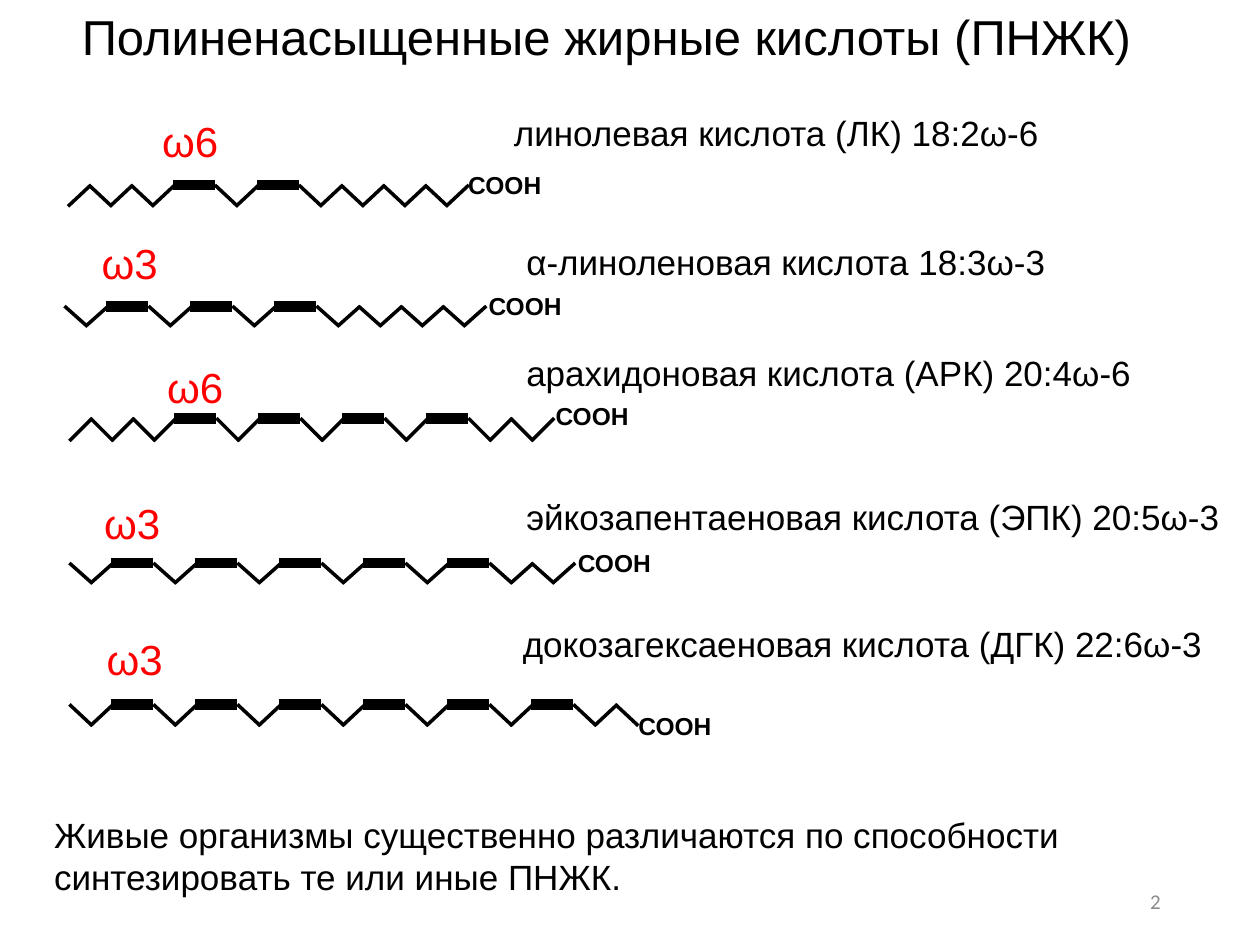
from dataclasses import dataclass
from lxml.etree import SubElement
from pptx import Presentation
from pptx.dml.color import RGBColor
from pptx.enum.shapes import MSO_CONNECTOR
from pptx.enum.text import MSO_ANCHOR, MSO_AUTO_SIZE, PP_ALIGN
from pptx.oxml.ns import qn
from pptx.slide import Slide
from pptx.util import Cm, Pt

INK = {"black": "000000", "red": "FF0000", "gray": "8C8C8C"}
STEP = 1.27 / 3
REACH = 0.46


@dataclass
class Acid:
    name: str
    name_at: tuple[float, float, float]
    mark: str
    mark_at: tuple[float, float]
    bonds: str
    start: tuple[float, float]
    drop: float
    end_at: tuple[float, float]


ACIDS = [
    Acid("линолевая кислота (ЛК) 18:2ω-6", (10.11, 2.13, 11.56), "ω6", (3.02, 2.21),
         "ududu" + "=du" * 2 + "du" * 3, (1.37, 3.73), 0.43, (9.19, 3.3)),
    Acid("α-линоленовая кислота 18:3ω-3", (10.36, 4.72, 11.05), "ω3", (1.8, 4.67),
         "du=" * 3 + "du" * 4, (1.3, 6.17), 0.41, (9.6, 5.74)),
    Acid("арахидоновая кислота (АРК) 20:4ω-6", (10.36, 6.96, 12.78), "ω6", (3.12, 7.16),
         "ududu" + "=du" * 4 + "du", (1.4, 8.43), 0.46, (10.95, 7.95)),
    Acid("эйкозапентаеновая кислота (ЭПК) 20:5ω-3", (10.36, 9.86, 14.58), "ω3", (1.85, 9.91),
         "du=" * 5 + "du" * 2, (1.4, 11.35), 0.41, (11.4, 10.92)),
    Acid("докозагексаеновая кислота (ДГК) 22:6ω-3", (10.29, 12.42, 14.3), "ω3", (1.9, 12.65),
         "du=" * 6 + "dud", (1.4, 14.2), 0.43, (12.62, 14.2)),
]


def write(slide: Slide, text: str, left: float, top: float, width: float, high: float, *,
          size: float = 20, ink: str = "black", font: str = "Arial", bold: bool = False,
          wrap: bool = False, grow: bool = True, align: PP_ALIGN = PP_ALIGN.LEFT,
          anchor: MSO_ANCHOR = MSO_ANCHOR.TOP) -> None:
    frame = slide.shapes.add_textbox(Cm(left), Cm(top), Cm(width), Cm(high)).text_frame
    frame.word_wrap = wrap
    frame.auto_size = MSO_AUTO_SIZE.SHAPE_TO_FIT_TEXT if grow else MSO_AUTO_SIZE.NONE
    frame.vertical_anchor = anchor
    para = frame.paragraphs[0]
    para.alignment = align
    run = para.add_run()
    run.text = text
    run.font.name = font
    run.font.size = Pt(size)
    run.font.bold = bold
    run.font.color.rgb = RGBColor.from_string(INK[ink])


def draw_line(slide: Slide, x1: float, y1: float, x2: float, y2: float, weight: float) -> None:
    line = slide.shapes.add_connector(MSO_CONNECTOR.STRAIGHT, Cm(x1), Cm(y1), Cm(x2), Cm(y2))
    line.line.color.rgb = RGBColor.from_string(INK["black"])
    line.line.width = Pt(weight)
    SubElement(line._element.spPr, qn("a:effectLst"))


def draw_chain(slide: Slide, acid: Acid) -> None:
    x, top = acid.start
    low = top + acid.drop
    for bond in acid.bonds:
        if bond == "=":
            draw_line(slide, x, top, x + 2 * STEP, top, 6.25)
            x += STEP
        elif bond == "d":
            draw_line(slide, x, top, x + REACH, low, 2)
        else:
            draw_line(slide, x + REACH, top, x, low, 2)
        x += STEP


def draw_acid(slide: Slide, acid: Acid) -> None:
    draw_chain(slide, acid)
    write(slide, "СООН", *acid.end_at, 2.54, 0.84, size=14, bold=True, wrap=True)
    write(slide, acid.mark, *acid.mark_at, 1.65, 1.27, size=24, ink="red")
    write(slide, acid.name, *acid.name_at, 1.12)


def main() -> None:
    deck = Presentation()
    deck.slide_width, deck.slide_height = Cm(25.4), Cm(19.05)
    slide = deck.slides.add_slide(deck.slide_layouts[6])
    write(slide, "2", 17.93, 17.65, 5.72, 1.02, size=12, ink="gray", font="Calibri",
          wrap=True, grow=False, align=PP_ALIGN.RIGHT, anchor=MSO_ANCHOR.MIDDLE)
    write(slide, "Полиненасыщенные жирные кислоты (ПНЖК)", 1.4, 0, 21.74, 1.45, size=28)
    for acid in ACIDS:
        draw_acid(slide, acid)
    write(slide, "Живые организмы существенно различаются по способности "
          "синтезировать те или иные ПНЖК.", 0.84, 16.28, 23.67, 1.96, wrap=True)
    deck.save("out.pptx")


if __name__ == "__main__":
    main()
